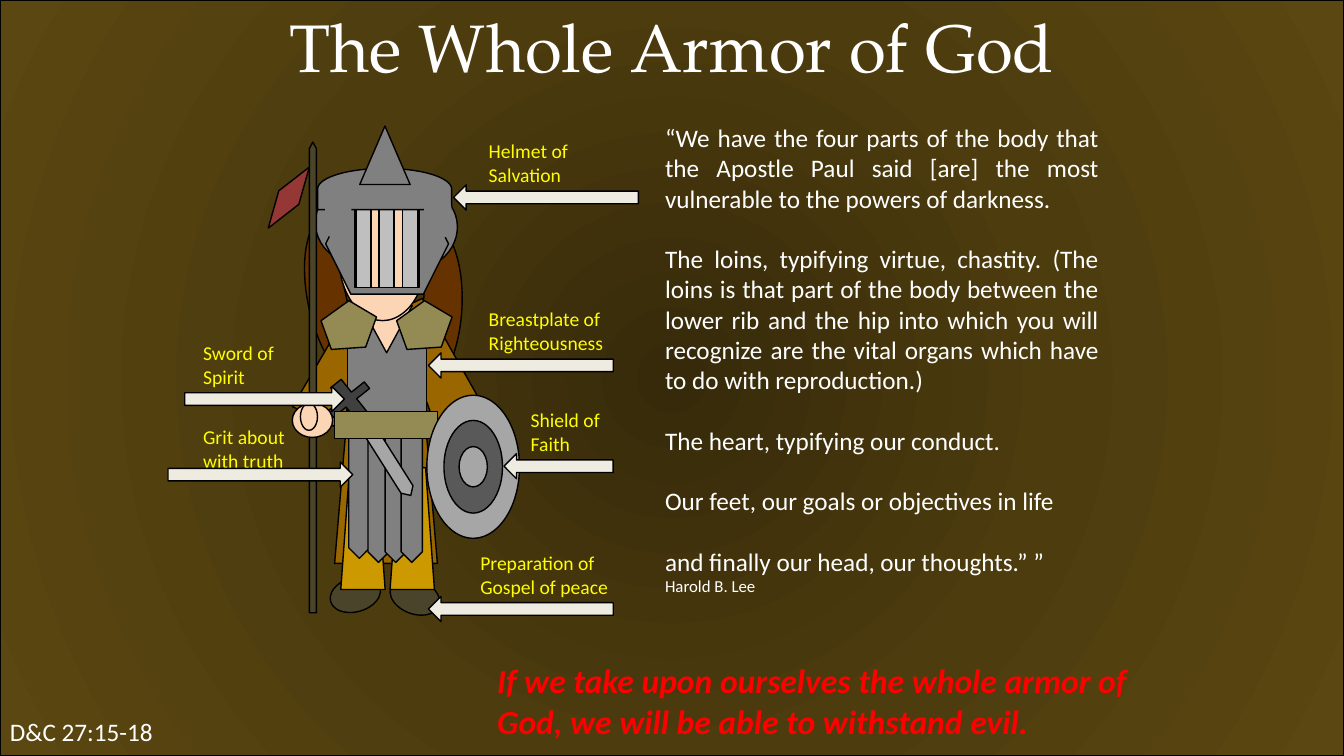
from lxml import etree
from pptx import Presentation
from pptx import util as u
from pptx.dml.color import RGBColor
from pptx.enum import shapes, text
from pptx.oxml.ns import qn

G = shapes.MSO_SHAPE
A = text.PP_ALIGN
WHITE, YELLOW, RED, BLACK = "FFFFFF", "FFFF00", "FF0000", "000000"
HAIR, SKIN, BOOT, SLEEVE, TROUSER = "663300", "FCD5B5", "4A452A", "996600", "CC9900"
STEEL, BAR, BLADE, LEATHER = "808080", "BFBFBF", "A6A6A6", "948A54"
HILT, RING, PENNANT, ARROW = "404040", "595959", "953735", "EEECE1"


def rgb(value):
    return RGBColor.from_string(value)


def write(p, words, size=18, color=WHITE, font="Calibri", bold=False,
          italic=False, align=A.LEFT, after=0):
    """Put one formatted run into a paragraph."""
    p.alignment = align
    p.space_before, p.space_after = u.Pt(0), u.Pt(after)
    r = p.add_run()
    r.text = words
    r.font.name, r.font.size = font, u.Pt(size)
    r.font.bold, r.font.italic = bold, italic
    r.font.color.rgb = rgb(color)


class Painter:
    """Holds the slide and draws each kind of element; lengths in points."""

    def __init__(self, prs):
        self.s = prs.slides.add_slide(prs.slide_layouts[5])

    def title(self, words, x, y, w, h):
        sp = self.s.shapes.title
        sp.left, sp.top, sp.width, sp.height = map(u.Pt, (x, y, w, h))
        tf = sp.text_frame
        tf.vertical_anchor = text.MSO_ANCHOR.TOP
        tf.auto_size = text.MSO_AUTO_SIZE.NONE
        p = tf.paragraphs[0]
        p.line_spacing = 1.0
        write(p, words, size=48, font="TeX Gyre Pagella", align=A.CENTER)

    def text(self, paragraphs, x, y, w, h, **style):
        """Each paragraph is a pair of words and its own format."""
        sp = self.s.shapes.add_textbox(*map(u.Pt, (x, y, w, h)))
        tf = sp.text_frame
        tf.word_wrap = True
        for i, (words, own) in enumerate(paragraphs):
            p = tf.add_paragraph() if i else tf.paragraphs[0]
            write(p, words, **{**style, **own})

    def shape(self, kind, x, y, w, h, fill, rot=0, flip=False, adj=None, line=BLACK):
        sp = self.s.shapes.add_shape(kind, *map(u.Pt, (x, y, w, h)))
        sp.shadow.inherit = False
        sp.fill.solid()
        sp.fill.fore_color.rgb = rgb(fill)
        sp.line.color.rgb = rgb(line)
        sp.line.width = u.Pt(1)
        sp.rotation = rot
        if flip:
            sp._element.spPr.find(qn("a:xfrm")).set("flipH", "1")
        if adj is not None:
            sp.adjustments[0] = adj
        return sp

    def backdrop(self, w, h, stops):
        """A full-slide rectangle with a round gradient, behind the title."""
        sp = self.shape(G.RECTANGLE, 0, 0, w, h, stops[0][1])
        sp.fill.gradient()
        grad = sp._element.spPr.find(qn("a:gradFill"))
        for child in list(grad):
            grad.remove(child)
        gs_list = etree.SubElement(grad, qn("a:gsLst"))
        for pos, color in stops:
            gs = etree.SubElement(gs_list, qn("a:gs"), pos=str(pos * 1000))
            etree.SubElement(gs, qn("a:srgbClr"), val=color)
        circle = etree.SubElement(grad, qn("a:path"))
        circle.set("path", "circle")
        etree.SubElement(circle, qn("a:fillToRect"),
                         **{side: "50000" for side in "ltrb"})
        self.s.shapes._spTree.insert(2, sp._element)

    def callout(self, words, x, y, w, arrow_x, arrow_y, arrow_w, rot=0):
        self.text([(words, {})], x, y, w, 41, size=14, color=YELLOW)
        self.shape(G.LEFT_ARROW, arrow_x, arrow_y, arrow_w, 18, ARROW, rot=rot)


def draw_body(d):
    # Hair, boots and clothes
    d.shape(G.MOON, 221, 152, 31.7, 134.6, HAIR, rot=166.1, flip=True, adj=0.875)
    d.shape(G.MOON, 298, 157, 31.7, 131.8, HAIR, rot=184.8, adj=0.875)
    d.shape(G.OVAL, 235.5, 412.5, 36.7, 24.5, BOOT, rot=344.3, flip=True)
    d.shape(G.OVAL, 278, 414, 36.7, 24.5, BOOT, rot=20.7, flip=True)
    for x, y, w, h, rot in ((239, 228.2, 73.4, 174.2, 180),
                            (291.6, 213.8, 37.4, 90, 155.2),
                            (224.6, 220.3, 37.4, 82, 205.1)):
        d.shape(G.FLOWCHART_MANUAL_OPERATION, x, y, w, h, SLEEVE, rot=rot)
    # Breastplate, neck and face
    d.shape(G.RECTANGLE, 248.4, 221.8, 56.2, 84.2, STEEL)
    d.shape(G.ISOSCELES_TRIANGLE, 257.8, 218.2, 36.7, 33.8, SKIN, rot=180)
    d.shape(G.OVAL, 242, 136.8, 62.6, 92.2, SKIN)


def draw_helmet(d):
    d.shape(G.MOON, 225.4, 128.2, 31.7, 58.3, STEEL, rot=189.3, flip=True, adj=0.875)
    d.shape(G.MOON, 294.5, 129.6, 31.7, 58.3, STEEL, rot=162.5, adj=0.875)
    d.shape(G.HEXAGON, 232.6, 138.2, 87.8, 72, STEEL)
    # Visor
    d.shape(G.RECTANGLE, 253.4, 142.6, 46, 62.6, SKIN)
    for i in range(3):
        d.shape(G.RECTANGLE, 254.2 + 16.6 * i, 142.6, 10.8, 62.6, BAR)
    # Dome, spike and sides
    d.shape(G.FLOWCHART_DELAY, 260, 87.1, 29.5, 95.8, STEEL, rot=270)
    d.shape(G.ISOSCELES_TRIANGLE, 257, 90, 36, 41.8, STEEL)
    d.shape(G.OVAL, 232.6, 131.8, 18, 41.8, STEEL, line=STEEL)
    d.shape(G.OVAL, 303.8, 133.9, 18.7, 36, STEEL, rot=349.8, line=STEEL)


def draw_armor(d):
    # Shoulder plates
    for x in (233.3, 287.3):
        d.shape(G.REGULAR_PENTAGON, x, 213.8, 35.3, 38.2, LEATHER, rot=70.2)
    # Spear with pennant, sword hilt and hand
    d.shape(G.PENTAGON, 55.4, 267.1, 336.2, 5, BOOT, rot=270, adj=0.909)
    d.shape(G.FLOWCHART_DECISION, 180, 132.5, 52.6, 17.3, PENNANT, rot=303.9)
    d.shape(G.CROSS, 232.6, 270.7, 33.1, 29.5, HILT, rot=321.4, adj=0.398)
    d.shape(G.OVAL, 208.8, 288, 28.8, 24.5, SKIN)
    # Trousers and skirt plates
    for x in (278.6, 243.4):
        d.shape(G.FLOWCHART_MANUAL_OPERATION, x, 334, 31.7, 87.1, TROUSER, rot=180)
    for x, y in ((208.8, 343.4), (222.5, 346.3), (234.7, 346.3), (246.2, 346.3)):
        d.shape(G.PENTAGON, x, y, 95.8, 15.1, STEEL, rot=90)
    # Thumb, blade and belt
    d.shape(G.OVAL, 214.6, 288, 12.2, 19.4, SKIN)
    d.shape(G.PENTAGON, 247, 323.3, 60.5, 10.1, BLADE, rot=57.7)
    d.shape(G.RECTANGLE, 239, 293.8, 73.4, 19.4, LEATHER)
    # Shield rings around one centre
    for w, h, fill in ((66.2, 102.2, BLADE), (41.8, 66.2, RING), (20.2, 28.8, BLADE)):
        d.shape(G.OVAL, 338 - w / 2, 333.4 - h / 2, w, h, fill)


def main():
    prs = Presentation()
    prs.slide_width, prs.slide_height = u.Pt(960), u.Pt(540)
    d = Painter(prs)

    # Background, title and reference
    d.backdrop(960, 540, ((0, "362A0A"), (50, "4D3C0E"), (100, "5B4711")))
    d.title("The Whole Armor of God", 120, 0, 720, 65.5)
    d.text([("D&C 27:15-18", {})], 0, 508.3, 150, 29)

    # Quotation
    gap = {"after": 21.6}
    d.text([
        ("“We have the four parts of the body that the Apostle Paul said [are] "
         "the most vulnerable to the powers of darkness.", gap),
        ("The loins, typifying virtue, chastity. (The loins is that part of the body "
         "between the lower rib and the hip into which you will recognize are the "
         "vital organs which have to do with reproduction.)", gap),
        ("The heart, typifying our conduct.", gap),
        ("Our feet, our goals or objectives in life", gap),
        ("and finally our head, our thoughts.” ”", {}),
        ("Harold B. Lee", {"size": 12}),
    ], 468, 84, 324, 356.4, align=A.JUSTIFY)

    # Warrior
    draw_body(d)
    draw_helmet(d)
    draw_armor(d)

    # Closing statement
    d.text([("If we take upon ourselves the whole armor of God, "
             "we will be able to withstand evil.", {})],
           348, 468, 468, 65.5, size=24, color=RED, bold=True, italic=True)

    # Labels with their arrows
    for label in (("Helmet of Salvation", 342, 96, 78, 324, 132, 132),
                  ("Breastplate of Righteousness", 342, 216, 108, 306, 252, 132),
                  ("Preparation of Gospel of peace", 336, 390, 114, 306, 426, 132),
                  ("Shield of Faith", 372, 288, 78, 360, 324, 78),
                  ("Sword of Spirit", 138, 240, 78, 132, 276, 114, 180),
                  ("Grit about with truth", 138, 300, 78, 120, 330, 132, 180)):
        d.callout(*label)

    prs.save("out.pptx")


if __name__ == "__main__":
    main()
